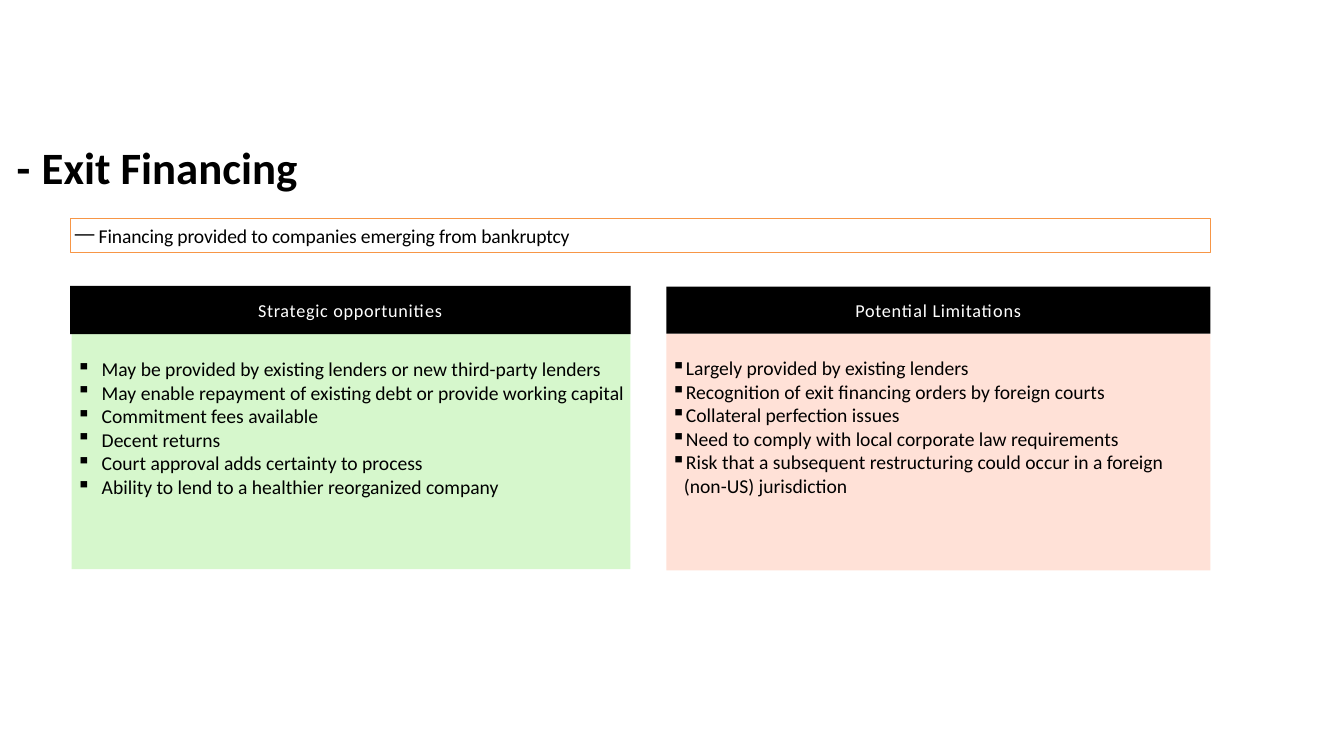
from lxml.etree import SubElement
from pptx import Presentation
from pptx.dml.color import RGBColor
from pptx.enum.shapes import MSO_SHAPE
from pptx.enum.text import MSO_ANCHOR, PP_ALIGN
from pptx.oxml.ns import qn
from pptx.util import Pt

COLORS = {
    "black": "000000",
    "white": "FFFFFF",
    "green": "32D700",
    "pink": "FFE1D7",
    "orange": "F79646",
}


def rgb(name):
    return RGBColor.from_string(COLORS[name])


def write_text(frame, text, size=28, color="black", bold=False, align=PP_ALIGN.LEFT,
               bullet=None, margin=0, first_line=0, tab=None, spacing=0):
    """Write each line of text as a paragraph; spacing is in points per letter."""
    for index, line in enumerate(text.split("\n")):
        para = frame.add_paragraph() if index else frame.paragraphs[0]
        para.alignment = align
        properties = para._p.get_or_add_pPr()
        properties.set("marL", str(Pt(margin)))
        properties.set("indent", str(Pt(first_line)))
        if bullet:
            SubElement(properties, qn("a:buChar"), char=bullet)
        if tab:
            tabs = SubElement(properties, qn("a:tabLst"))
            SubElement(tabs, qn("a:tab"), pos=str(Pt(tab)), algn="l")
        span = para.add_run()
        span.text = line
        span.font.name = "Calibri"
        span.font.size = Pt(size)
        span.font.bold = bold
        span.font.color.rgb = rgb(color)
        if spacing:
            span._r.get_or_add_rPr().set("spc", str(round(spacing * 100)))


class SlideBuilder:
    def __init__(self, page):
        self.page = page

    def set_frame(self, box, top, bottom, anchor=MSO_ANCHOR.TOP):
        frame = box.text_frame
        frame.word_wrap = True
        frame.vertical_anchor = anchor
        frame.margin_left = frame.margin_right = Pt(7.2)
        frame.margin_top, frame.margin_bottom = Pt(top), Pt(bottom)
        return frame

    def title(self, text, *bounds):
        box = self.page.shapes.add_textbox(*map(Pt, bounds))
        frame = self.set_frame(box, 7.2, 7.2)
        write_text(frame, text, size=64, bold=True, first_line=36, tab=144)

    def rectangle(self, bounds, fill, line=None, opacity=None):
        box = self.page.shapes.add_shape(MSO_SHAPE.RECTANGLE, *map(Pt, bounds))
        box.shadow.inherit = False
        box.fill.solid()
        box.fill.fore_color.rgb = rgb(fill)
        if opacity:
            color = box.fill._xPr.find(qn("a:solidFill"))[0]
            SubElement(color, qn("a:alpha"), val=str(opacity * 1000))
        if line:
            box.line.color.rgb = rgb(line)
            box.line.width = Pt(1)
        else:
            box.line.fill.background()
        return box

    def summary(self, text, *bounds):
        box = self.rectangle(bounds, "white", line="orange")
        write_text(self.set_frame(box, 7.2, 7.2), text, bullet="—",
                   margin=34, first_line=-34, spacing=-0.2)

    def header(self, text, *bounds):
        box = self.rectangle(bounds, "black")
        write_text(self.set_frame(box, 0, 0, MSO_ANCHOR.MIDDLE), text, size=26,
                   color="white", align=PP_ALIGN.CENTER, spacing=1)

    def bullet_panel(self, text, *bounds, fill, hanging, opacity=None):
        box = self.rectangle(bounds, fill, opacity=opacity)
        write_text(self.set_frame(box, 32.4, 3.6), text, bullet="▪",
                   margin=hanging, first_line=-hanging)


OPPORTUNITIES = """May be provided by existing lenders or new third-party lenders
May enable repayment of existing debt or provide working capital
Commitment fees available
Decent returns
Court approval adds certainty to process
Ability to lend to a healthier reorganized company"""

LIMITATIONS = """Largely provided by existing lenders
Recognition of exit financing orders by foreign courts
Collateral perfection issues
Need to comply with local corporate law requirements
Risk that a subsequent restructuring could occur in a foreign (non-US) jurisdiction"""


def main():
    deck = Presentation()
    deck.slide_width, deck.slide_height = Pt(1920), Pt(1080)
    builder = SlideBuilder(deck.slides.add_slide(deck.slide_layouts[6]))

    builder.title("-\tExit Financing", -19.5, 192.25, 1538.5, 570)
    builder.bullet_panel(OPPORTUNITIES, 102.25, 477.5, 798.5, 335.5,
                         fill="green", opacity=20, hanging=36)
    builder.header("Strategic opportunities", 100, 408.25, 800.75, 69.25)
    builder.bullet_panel(LIMITATIONS, 952, 476.5, 777, 338.5, fill="pink", hanging=18)
    builder.summary("Financing provided to companies emerging from bankruptcy",
                    100, 312.5, 1629, 48.5)
    builder.header("Potential Limitations", 952, 409.5, 777, 67)

    deck.save("out.pptx")


if __name__ == "__main__":
    main()
